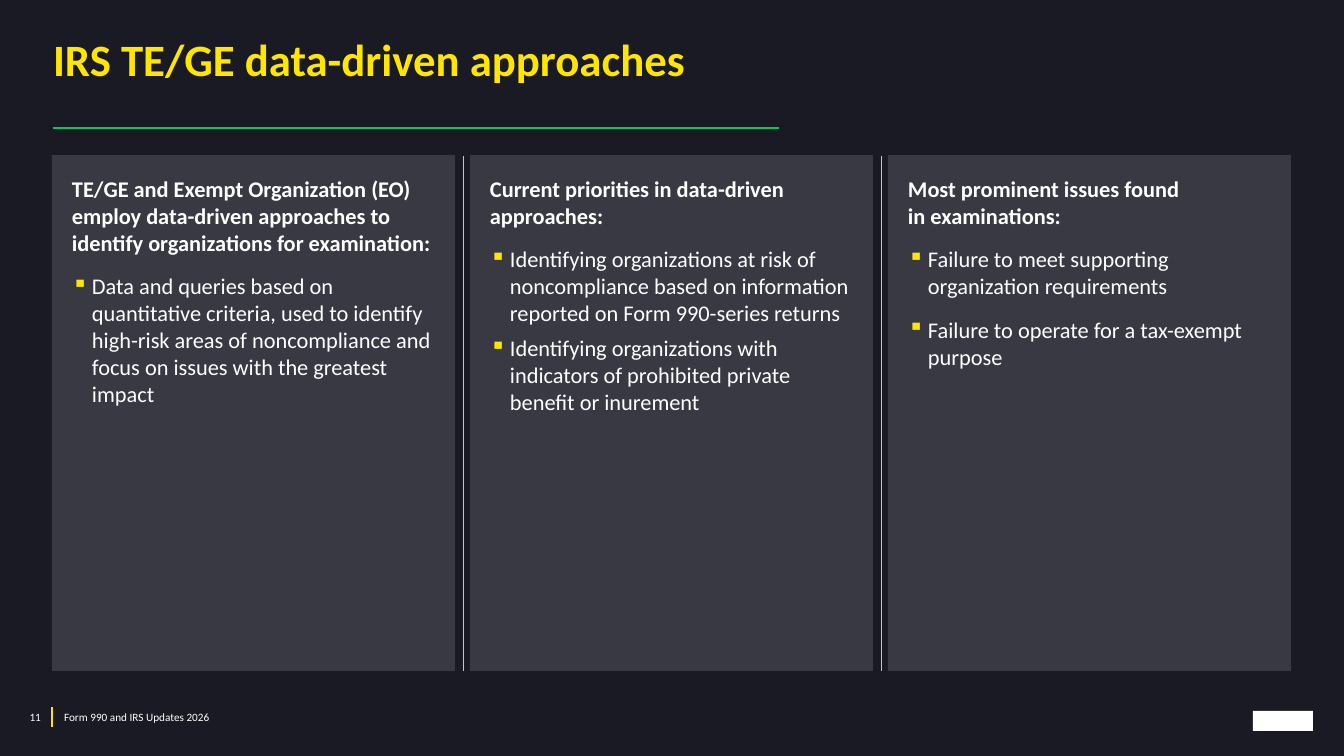
"""Build the slide on data-driven examination approaches."""
from lxml.etree import SubElement
from pptx import Presentation
from pptx.dml.color import RGBColor
from pptx.enum.shapes import MSO_CONNECTOR, MSO_SHAPE
from pptx.enum.text import MSO_ANCHOR, PP_ALIGN
from pptx.oxml.ns import qn
from pptx.util import Emu, Pt

PX = 12192000 / 1344
COLORS = {
    "night": "1A1A24", "yellow": "FFE600", "green": "00C864",
    "rule": "C4C4CD", "panel": "747480", "white": "FFFFFF",
}
COLUMNS = [
    (12, "TE/GE and Exempt Organization (EO) employ data-driven approaches to "
         "identify organizations for examination:",
     ["Data and queries based on quantitative criteria, used to identify "
      "high-risk areas of noncompliance and focus on issues with the greatest impact"]),
    (6, "Current priorities in data-driven approaches:",
     ["Identifying organizations at risk of noncompliance based on information "
      "reported on Form 990-series returns",
      "Identifying organizations with indicators of prohibited private benefit or inurement"]),
    (12, "Most prominent issues found\vin examinations:",
     ["Failure to meet supporting organization requirements",
      "Failure to operate for a tax-exempt purpose"]),
]
LINES = [
    (52, 707, 52, 727, "yellow", 1),
    (53, 128, 779, 128, "green", 2),
    (463, 156, 463, 671, "rule", 0.25),
    (881, 156, 881, 671, "rule", 0.25),
]
LABELS = [
    (53, 40, 1054, 117, 0, 0, "IRS TE/GE data-driven approaches", 32, "yellow", PP_ALIGN.LEFT),
    (54, 710, 605, 13, 10, 0, "Form 990 and IRS Updates 2026", 8, "white", PP_ALIGN.LEFT),
    (11, 710, 40, 13, 0, 10, "11", 8, "white", PP_ALIGN.RIGHT),
]


def px(*lengths):
    return [Emu(round(length * PX)) for length in lengths]


def style(para, size, color, bold):
    para.font.name = "Calibri"
    para.font.size = Pt(size)
    para.font.bold = bold
    para.font.color.rgb = RGBColor.from_string(COLORS[color])


deck = Presentation()
deck.slide_width, deck.slide_height = px(1344, 756)
page = deck.slides.add_slide(deck.slide_layouts[6])
page.background.fill.solid()
page.background.fill.fore_color.rgb = RGBColor.from_string(COLORS["night"])

for x1, y1, x2, y2, color, width in LINES:
    line = page.shapes.add_connector(MSO_CONNECTOR.STRAIGHT, *px(x1, y1, x2, y2))
    line.line.color.rgb = RGBColor.from_string(COLORS[color])
    line.line.width = Pt(width)
    SubElement(line._element.spPr, qn("a:effectLst"))

for left, top, width, height, inset_left, inset_right, text, size, color, align in LABELS:
    frame = page.shapes.add_textbox(*px(left, top, width, height)).text_frame
    frame.word_wrap = True
    frame.margin_left, frame.margin_right = px(inset_left, inset_right)
    frame.margin_top = frame.margin_bottom = 0
    para = frame.paragraphs[0]
    para.text = text
    para.alignment = align
    if size == 32:
        para.line_spacing = 0.85
    style(para, size, color, size == 32)

for index, (gap, heading, points) in enumerate(COLUMNS):
    panel = page.shapes.add_shape(MSO_SHAPE.RECTANGLE, *px(52 + 418 * index, 155, 403, 516))
    panel.shadow.inherit = False
    panel.line.fill.background()
    panel.fill.solid()
    panel.fill.fore_color.rgb = RGBColor.from_string(COLORS["panel"])
    tint = panel._element.spPr.find(".//" + qn("a:srgbClr"))
    SubElement(tint, qn("a:alpha"), val="35000")
    frame = panel.text_frame
    frame.word_wrap = True
    frame.vertical_anchor = MSO_ANCHOR.TOP
    frame.margin_left, frame.margin_top, frame.margin_right, frame.margin_bottom = px(20, 20, 20, 10)
    para = frame.paragraphs[0]
    para.text = heading
    para.alignment = PP_ALIGN.LEFT
    para.space_after = Pt(12)
    style(para, 16, "white", True)
    for point in points:
        para = frame.add_paragraph()
        para.text = point
        para.alignment = PP_ALIGN.LEFT
        para.space_after = Pt(gap)
        properties = para._p.get_or_add_pPr()
        indent = px(20)[0]
        properties.set("marL", str(indent))
        properties.set("indent", str(-indent))
        bullet_color = SubElement(properties, qn("a:buClr"))
        SubElement(bullet_color, qn("a:srgbClr"), val=COLORS["yellow"])
        SubElement(properties, qn("a:buChar"), char="▪")
        style(para, 16, "white", False)

emblem = page.shapes.add_shape(MSO_SHAPE.RECTANGLE, *px(1253, 711, 60, 20))
emblem.shadow.inherit = False
emblem.line.fill.background()
emblem.fill.solid()
emblem.fill.fore_color.rgb = RGBColor.from_string(COLORS["white"])

deck.save("out.pptx")
